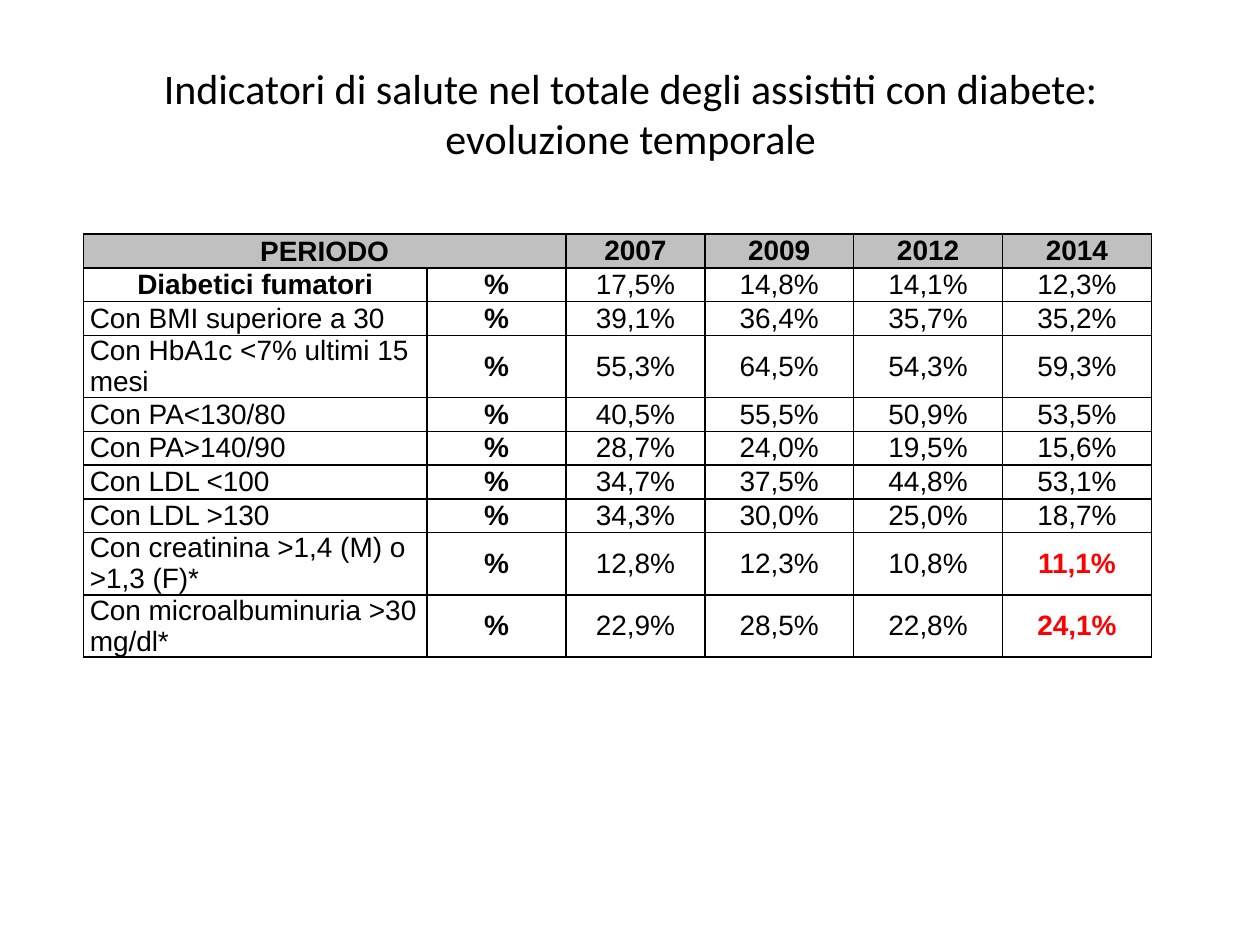
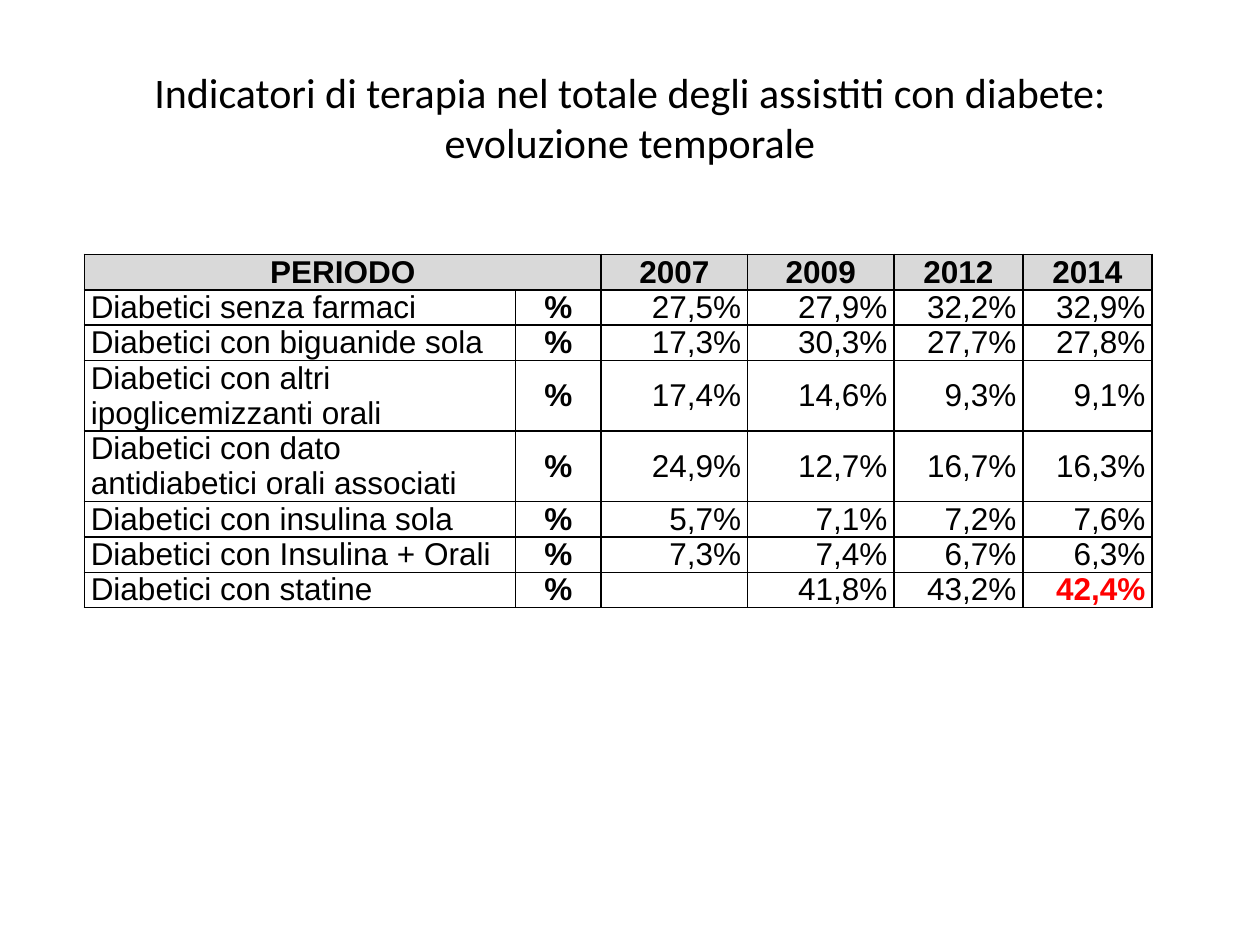
from pptx import Presentation
from pptx.dml.color import RGBColor
from pptx.enum.text import MSO_ANCHOR as ANCHOR, MSO_AUTO_SIZE as AUTO_SIZE, PP_ALIGN as ALIGN
from pptx.oxml import parse_xml
from pptx.oxml.ns import nsdecls
from pptx.util import Cm, Pt

BLACK = RGBColor(0x00, 0x00, 0x00)
WHITE = RGBColor(0xFF, 0xFF, 0xFF)
RED = RGBColor(0xFF, 0x00, 0x00)
SILVER = RGBColor(0xC0, 0xC0, 0xC0)
LIGHT_GREY = RGBColor(0xD9, 0xD9, 0xD9)

TITLE_FONT, TABLE_FONT = "Calibri", "Arial"
TITLE_SIZE = 24
YEARS = ["2007", "2009", "2012", "2014"]

HEALTH = [
    ("Diabetici fumatori", "17,5%", "14,8%", "14,1%", "12,3%"),
    ("Con BMI superiore a 30", "39,1%", "36,4%", "35,7%", "35,2%"),
    ("Con HbA1c <7% ultimi 15 mesi", "55,3%", "64,5%", "54,3%", "59,3%"),
    ("Con PA<130/80", "40,5%", "55,5%", "50,9%", "53,5%"),
    ("Con PA>140/90", "28,7%", "24,0%", "19,5%", "15,6%"),
    ("Con LDL <100", "34,7%", "37,5%", "44,8%", "53,1%"),
    ("Con LDL >130", "34,3%", "30,0%", "25,0%", "18,7%"),
    ("Con creatinina >1,4 (M) o >1,3 (F)*", "12,8%", "12,3%", "10,8%", "11,1%"),
    ("Con microalbuminuria >30 mg/dl*", "22,9%", "28,5%", "22,8%", "24,1%"),
]
THERAPY = [
    ("Diabetici senza farmaci", "27,5%", "27,9%", "32,2%", "32,9%"),
    ("Diabetici con biguanide sola", "17,3%", "30,3%", "27,7%", "27,8%"),
    ("Diabetici con altri ipoglicemizzanti orali", "17,4%", "14,6%", "9,3%", "9,1%"),
    ("Diabetici con dato antidiabetici orali associati", "24,9%", "12,7%", "16,7%", "16,3%"),
    ("Diabetici con insulina sola", "5,7%", "7,1%", "7,2%", "7,6%"),
    ("Diabetici con Insulina + Orali", "7,3%", "7,4%", "6,7%", "6,3%"),
    ("Diabetici con statine", "", "41,8%", "43,2%", "42,4%"),
]


class Deck:
    def __init__(self):
        self.prs = Presentation()
        self.prs.slide_width, self.prs.slide_height = Cm(25.4), Cm(19.05)
        self.s = None

    def add_slide(self):
        self.s = self.prs.slides.add_slide(self.prs.slide_layouts[5])

    def run(self, p, text, font, size, bold=False, color=BLACK):
        r = p.add_run()
        r.text = text
        r.font.name, r.font.size = font, Pt(size)
        r.font.bold, r.font.color.rgb = bold, color

    def title(self, lines, left, top, width, height):
        sp = self.s.shapes.title
        sp.left, sp.top, sp.width, sp.height = Cm(left), Cm(top), Cm(width), Cm(height)
        tf = sp.text_frame
        tf.word_wrap, tf.auto_size = True, AUTO_SIZE.NONE
        tf.vertical_anchor = ANCHOR.MIDDLE
        p = tf.paragraphs[0]
        p.alignment = ALIGN.CENTER
        for i, line in enumerate(lines):
            if i:
                p.add_line_break()
            self.run(p, line, TITLE_FONT, TITLE_SIZE)

    def cell(self, cell, text, size, align, fill, bold=False, color=BLACK):
        tc_pr = cell._tc.get_or_add_tcPr()
        for side in "LRTB":
            tc_pr.append(parse_xml(
                f'<a:ln{side} {nsdecls("a")} w="{Pt(1)}"><a:solidFill>'
                f'<a:srgbClr val="{BLACK}"/></a:solidFill></a:ln{side}>'))
        cell.fill.solid()
        cell.fill.fore_color.rgb = fill
        cell.margin_left = cell.margin_right = Cm(0.13)
        cell.margin_top = cell.margin_bottom = 0
        cell.vertical_anchor = ANCHOR.MIDDLE
        p = cell.text_frame.paragraphs[0]
        p.alignment = align
        self.run(p, text, TABLE_FONT, size, bold, color)

    def table(self, data, left, top, col_widths, row_height, size,
              header_fill, value_align, centred_labels=(), alerts=()):
        """Indicators by year; alerts are the labels whose last value is red."""
        n_rows = len(data) + 1
        tbl = self.s.shapes.add_table(
            n_rows, len(col_widths), Cm(left), Cm(top),
            Cm(sum(col_widths)), Cm(row_height * n_rows)).table
        tbl.first_row = tbl.horz_banding = False
        for col, width in zip(tbl.columns, col_widths):
            col.width = Cm(width)

        for c, text in enumerate(["PERIODO", "", *YEARS]):
            self.cell(tbl.cell(0, c), text, size, ALIGN.CENTER, header_fill, bold=True)
        tbl.cell(0, 0).merge(tbl.cell(0, 1))
        tbl.cell(0, 0).vertical_anchor = ANCHOR.BOTTOM

        for row, (label, *values) in enumerate(data, 1):
            centred = label in centred_labels
            self.cell(tbl.cell(row, 0), label, size,
                      ALIGN.CENTER if centred else ALIGN.LEFT, WHITE, bold=centred)
            self.cell(tbl.cell(row, 1), "%", size, ALIGN.CENTER, WHITE, bold=True)
            for c, value in enumerate(values, 2):
                alert = label in alerts and c == len(col_widths) - 1
                self.cell(tbl.cell(row, c), value, size, value_align, WHITE,
                          bold=alert, color=RED if alert else BLACK)


def main():
    deck = Deck()

    deck.add_slide()
    deck.title(["Indicatori di salute nel totale degli assistiti con diabete: evoluzione temporale"],
               2.11, 1.12, 21.21, 2.31)
    deck.table(HEALTH, 1.68, 4.72, [6.93, 2.8, 2.8, 3, 3, 3], 0.68, 16,
               SILVER, ALIGN.CENTER, centred_labels=[HEALTH[0][0]],
               alerts=[HEALTH[-2][0], HEALTH[-1][0]])

    deck.add_slide()
    deck.title(["Indicatori di terapia nel totale degli assistiti con diabete:",
                "evoluzione temporale"], 1.27, 0.76, 22.86, 3.18)
    deck.table(THERAPY, 1.7, 5.13, [8.69, 1.73, 2.95, 2.95, 2.6, 2.6], 0.5, 18,
               LIGHT_GREY, ALIGN.RIGHT, alerts=[THERAPY[-1][0]])

    deck.prs.save("out.pptx")


if __name__ == "__main__":
    main()
